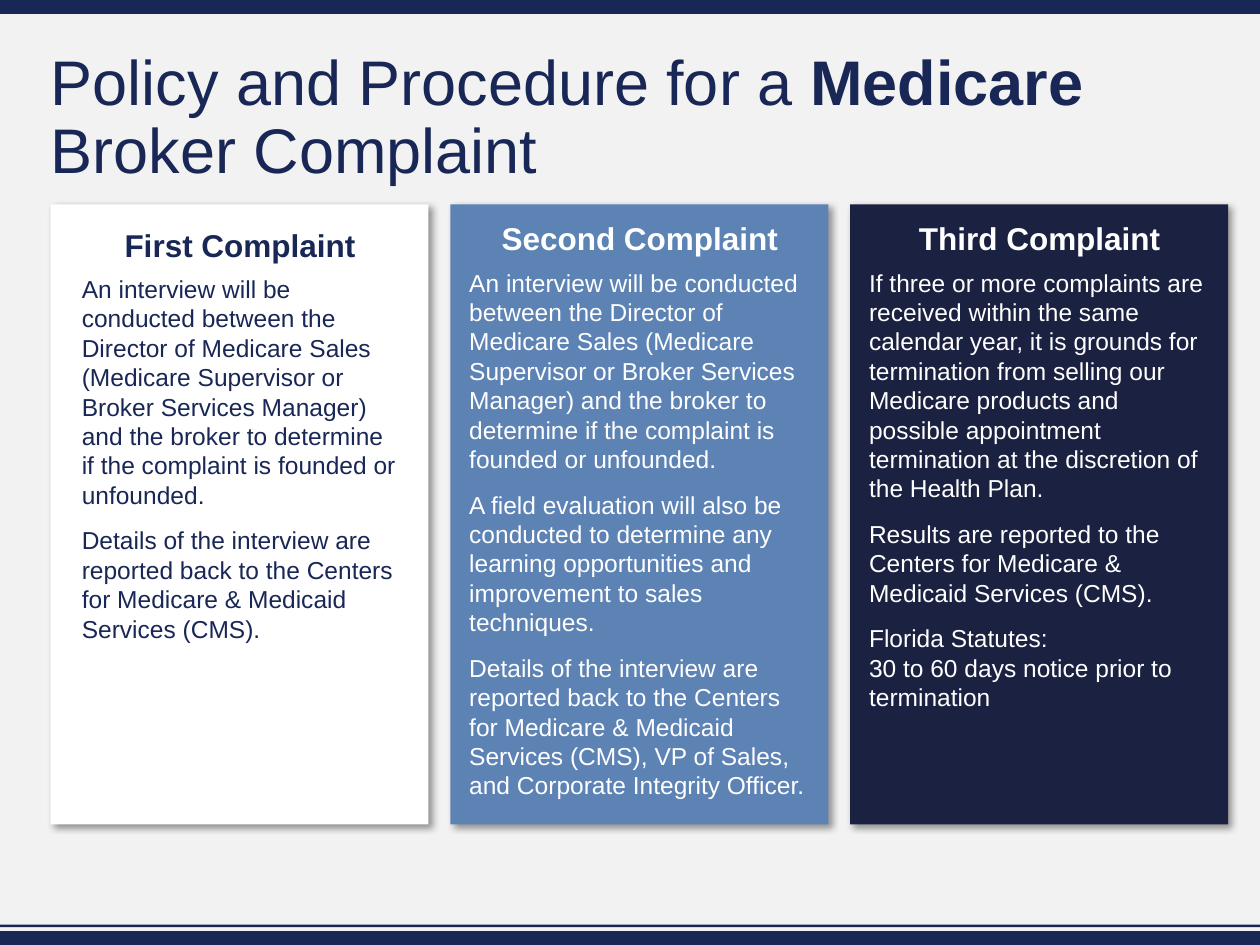
"""Build the slide on the three steps of a Medicare broker complaint."""
from dataclasses import dataclass

from lxml import etree
from pptx import Presentation
from pptx.dml.color import RGBColor
from pptx.enum.shapes import MSO_SHAPE
from pptx.enum.text import MSO_ANCHOR, MSO_AUTO_SIZE, PP_ALIGN
from pptx.oxml.ns import qn
from pptx.util import Cm, Pt

RECTANGLE = MSO_SHAPE.RECTANGLE
TOP = MSO_ANCHOR.TOP
FIXED = MSO_AUTO_SIZE.NONE
LEFT, CENTER = PP_ALIGN.LEFT, PP_ALIGN.CENTER


@dataclass(frozen=True)
class Theme:
    font: str = "Arial"
    paper: str = "F2F2F2"
    navy: str = "192757"
    white: str = "FFFFFF"
    blue: str = "5D83B5"
    midnight: str = "1B2140"
    shadow: str = "000000"
    title_size: int = 36
    heading_size: int = 18
    body_size: int = 14


theme = Theme()


def add_text(para, text, *, size, color, bold=False, align=LEFT, before=0, after=0):
    para.alignment = align
    para.space_before, para.space_after = Pt(before), Pt(after)
    span = para.add_run()
    span.text = text
    span.font.name, span.font.size, span.font.bold = theme.font, Pt(size), bold
    span.font.color.rgb = RGBColor.from_string(color)


def add_block(page, left, top, width, height, color):
    block = page.shapes.add_shape(RECTANGLE, Cm(left), Cm(top), Cm(width), Cm(height))
    block.shadow.inherit = False
    block.fill.solid()
    block.fill.fore_color.rgb = RGBColor.from_string(color)
    block.line.fill.background()
    return block


deck = Presentation()
deck.slide_width, deck.slide_height = Cm(25.4), Cm(19.05)
page = deck.slides.add_slide(deck.slide_layouts[5])
page.background.fill.solid()
page.background.fill.fore_color.rgb = RGBColor.from_string(theme.paper)

for top, height in [(0, 0.28), (18.77, 0.28), (18.64, 0.05)]:
    add_block(page, 0, top, 25.4, height, theme.navy)

title = page.shapes.title
title.left, title.top, title.width, title.height = Cm(1.02), Cm(1.02), Cm(23.37), Cm(1.57)
frame = title.text_frame
frame.margin_left = frame.margin_right = frame.margin_top = frame.margin_bottom = 0
frame.vertical_anchor, frame.auto_size, frame.word_wrap = TOP, FIXED, True
para = frame.paragraphs[0]
para.line_spacing = 0.9
title_format = {"size": theme.title_size, "color": theme.navy}
add_text(para, "Policy and Procedure for a ", **title_format)
add_text(para, "Medicare", bold=True, **title_format)
para.add_line_break()
add_text(para, "Broker Complaint", **title_format)

interview = (
    "An interview will be conducted between the Director of Medicare Sales "
    "(Medicare Supervisor or Broker Services Manager) and the broker to determine "
    "if the complaint is founded or unfounded."
)
report = (
    "Details of the interview are reported back to the Centers for "
    "Medicare & Medicaid Services (CMS)"
)
gap = 9.2
cards = [
    ("First Complaint", theme.white, theme.navy, 0.25, 0.13,
     [(interview, 0), (report + ".", gap)]),
    ("Second Complaint", theme.blue, theme.white, 0, 0,
     [(interview, 0),
      ("A field evaluation will also be conducted to determine any learning "
       "opportunities and improvement to sales techniques.", gap),
      (report + ", VP of Sales, and Corporate Integrity Officer.", gap)]),
    ("Third Complaint", theme.midnight, theme.white, 0, 0,
     [("If three or more complaints are received within the same calendar year, "
       "it is grounds for termination from selling our Medicare products and possible "
       "appointment termination at the discretion of the Health Plan.", 0),
      ("Results are reported to the Centers for Medicare & Medicaid Services (CMS).", gap),
      ("Florida Statutes:", gap),
      ("30 to 60 days notice prior to termination", 0)]),
]
card_left, card_top, card_width, card_height, card_pitch = 1.02, 4.12, 7.62, 12.5, 8.06

for index, (heading, fill, ink, side_margin, top_margin, body) in enumerate(cards):
    left = card_left + index * card_pitch
    card = add_block(page, left, card_top, card_width, card_height, fill)
    effects = card._element.spPr.find(qn("a:effectLst"))
    shadow = etree.SubElement(
        effects, qn("a:outerShdw"), blurRad=str(Pt(4)), dist=str(Pt(3)),
        dir="2700000", algn="tl", rotWithShape="0")
    shade = etree.SubElement(shadow, qn("a:srgbClr"), val=theme.shadow)
    etree.SubElement(shade, qn("a:alpha"), val="40000")

    box = page.shapes.add_textbox(Cm(left + 0.38), Cm(card_top + 0.3), Cm(6.88), Cm(11.9))
    frame = box.text_frame
    frame.word_wrap = True
    frame.margin_left = frame.margin_right = Cm(side_margin)
    frame.margin_top = frame.margin_bottom = Cm(top_margin)
    add_text(frame.paragraphs[0], heading, size=theme.heading_size, color=ink,
             bold=True, align=CENTER, after=6)
    for text, before in body:
        add_text(frame.add_paragraph(), text, size=theme.body_size, color=ink, before=before)

deck.save("out.pptx")
